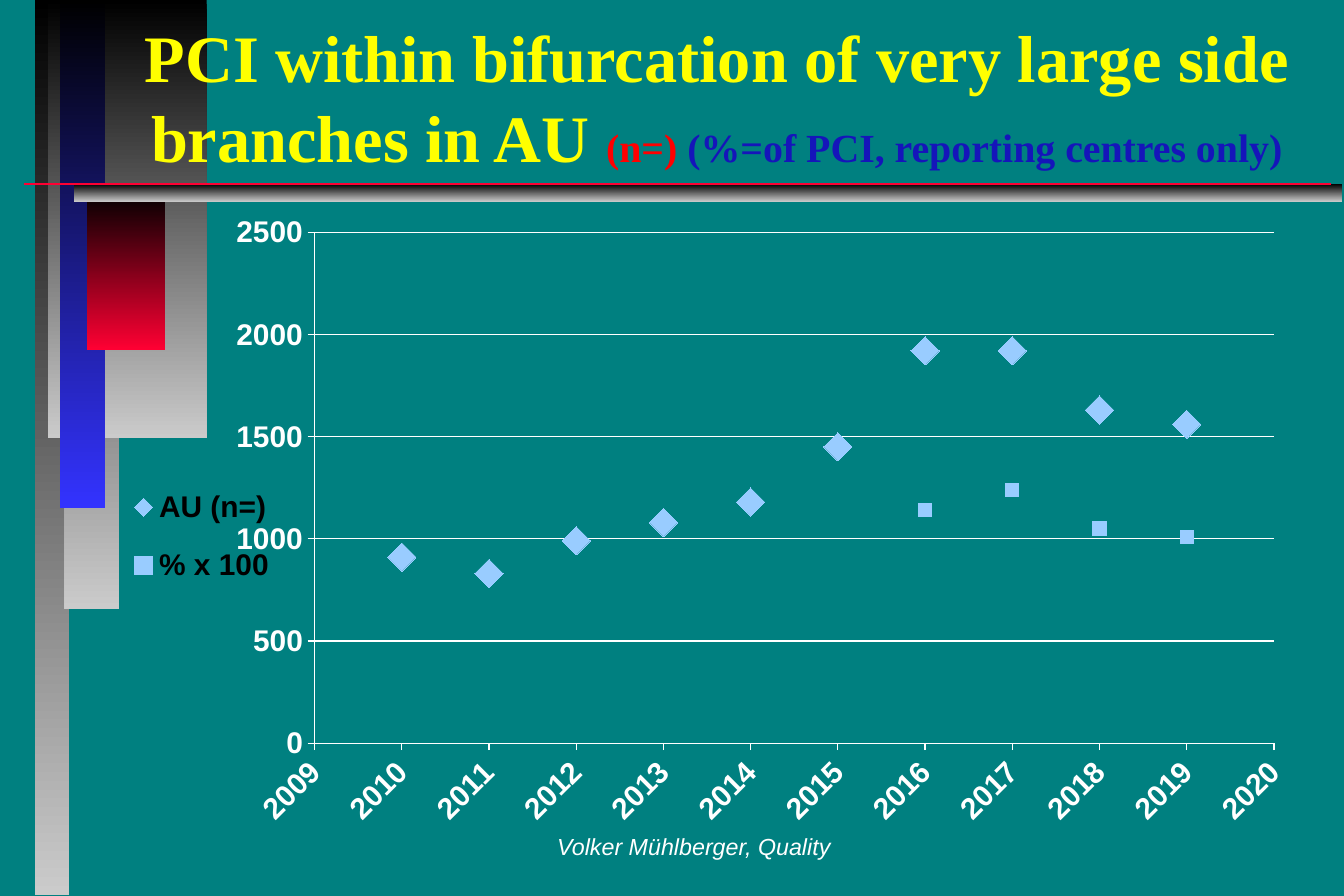
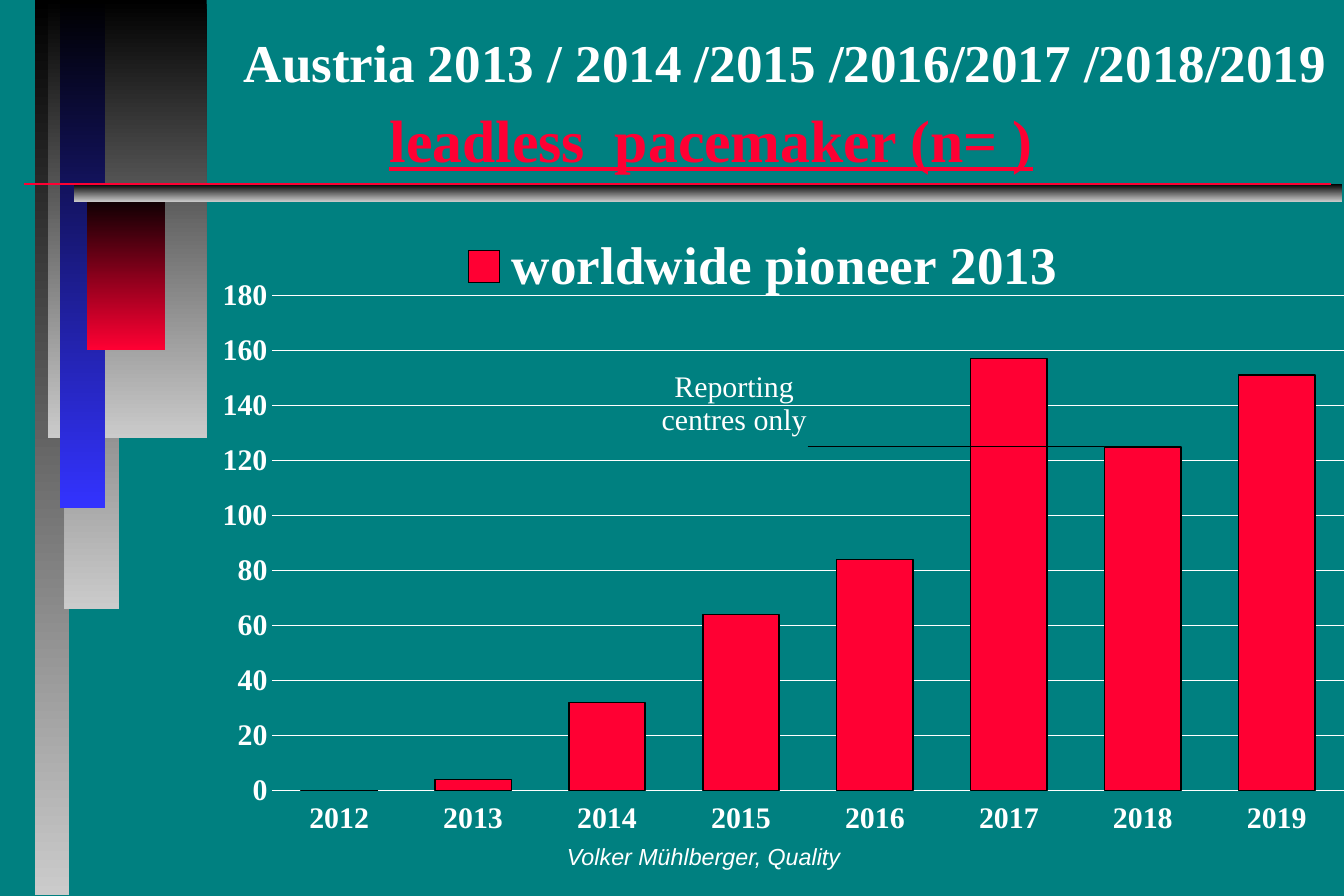
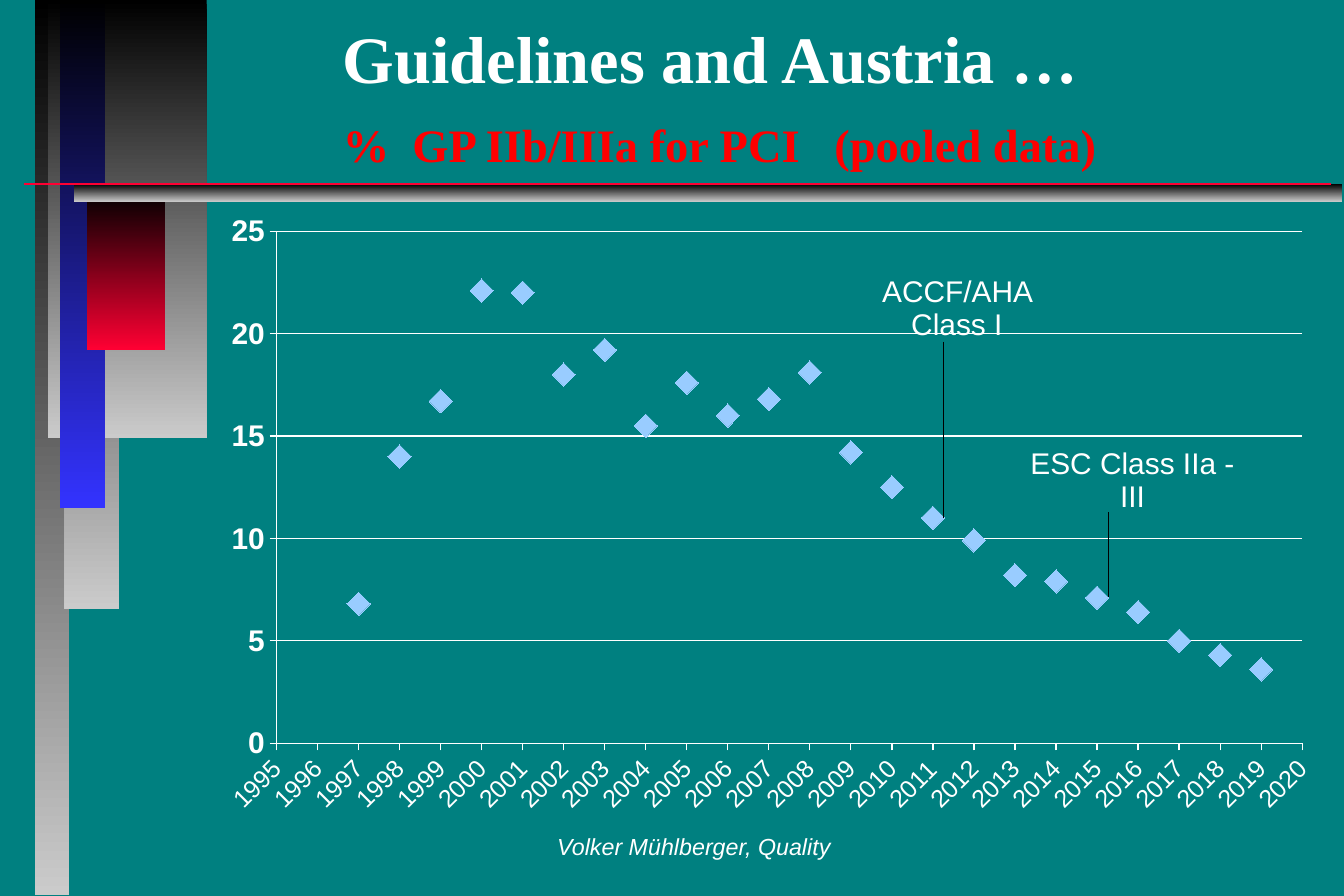
from dataclasses import dataclass

from pptx import Presentation
from pptx.chart.data import CategoryChartData, XyChartData
from pptx.dml.color import RGBColor
from pptx.enum.chart import (XL_CHART_TYPE, XL_LEGEND_POSITION, XL_MARKER_STYLE,
                             XL_TICK_LABEL_POSITION, XL_TICK_MARK)
from pptx.enum.shapes import MSO_CONNECTOR, MSO_SHAPE
from pptx.enum.text import MSO_ANCHOR, MSO_AUTO_SIZE, PP_ALIGN
from pptx.oxml import parse_xml
from pptx.oxml.ns import nsdecls
from pptx.util import Inches, Pt


@dataclass(frozen=True)
class Theme:
    teal: str = "008080"
    white: str = "FFFFFF"
    black: str = "000000"
    grey: str = "CBCBCB"
    blue: str = "3333FF"
    navy: str = "1515BA"
    crimson: str = "FF0033"
    red: str = "FF0000"
    yellow: str = "FFFF00"
    sky: str = "99CCFF"
    serif: str = "Times New Roman"
    sans: str = "Arial"
    title_size: int = 40
    legend_size: int = 32
    chart_size: int = 18
    small_axis_size: int = 15
    footer_size: int = 14
    callout_spacing: int = 20


THEME = Theme()

# Gradient bands behind every slide: left, top, width, height, end colour
BANDS = [
    (0.29, 0, 0.29, 7.49, THEME.grey),
    (0.54, 0, 0.46, 5.1, THEME.grey),
    (0.4, 0, 1.33, 3.67, THEME.grey),
    (0.5, 0, 0.38, 4.25, THEME.blue),
    (0.73, 1.6, 0.65, 1.33, THEME.crimson),
    (0.62, 1.54, 10.61, 0.15, THEME.grey),
]


def rgb(color):
    return RGBColor.from_string(color)


def set_font(font, size, color, name=THEME.sans, bold=False):
    font.size, font.name, font.bold = Pt(size), name, bold
    font.color.rgb = rgb(color)


def set_line(line, color, width):
    line.color.rgb = rgb(color)
    line.width = Pt(width)


# Shared decoration

def add_band(slide, left, top, width, height, color):
    band = slide.shapes.add_shape(MSO_SHAPE.RECTANGLE, Inches(left), Inches(top),
                                  Inches(width), Inches(height))
    band.shadow.inherit = False
    band.line.fill.background()
    band.fill.gradient()
    band.fill.gradient_angle = 270
    for stop, stop_color in zip(band.fill.gradient_stops, (THEME.black, color)):
        stop.color.rgb = rgb(stop_color)
    return band


def add_rule(slide, start, end, color, width):
    rule = slide.shapes.add_connector(MSO_CONNECTOR.STRAIGHT,
                                      *(Inches(value) for value in start + end))
    set_line(rule.line, color, width)
    rule.element.spPr.append(parse_xml(f"<a:effectLst {nsdecls('a')}/>"))
    return rule


def decorate_layout(layout, slide):
    """Draw the bands once and move them behind the layout's placeholders."""
    parts = [add_band(slide, *band) for band in BANDS]
    parts.append(add_rule(slide, (0.2, 1.54), (11.14, 1.54), THEME.crimson, 1))
    for index, part in enumerate(parts):
        part.element.xpath(".//p:cNvPr")[0].set("id", str(100 + index))
        layout.shapes.element.insert(2 + index, part.element)


# Text

def add_title(slide, left, width, lines, alignment=PP_ALIGN.LEFT, bottom=0.05):
    """Each line is (indent, space before, [(text, size, color, underline)])."""
    title = slide.shapes.title
    title.left, title.top = Inches(left), Inches(0.25)
    title.width, title.height = Inches(width), Inches(1.27)
    frame = title.text_frame
    frame.auto_size = MSO_AUTO_SIZE.NONE
    frame.vertical_anchor = MSO_ANCHOR.BOTTOM
    frame.margin_bottom = Inches(bottom)
    for index, (indent, space, runs) in enumerate(lines):
        paragraph = frame.add_paragraph() if index else frame.paragraphs[0]
        paragraph.alignment = alignment
        paragraph.space_before = Pt(space)
        properties = paragraph._p.get_or_add_pPr()
        properties.set("marL", str(Inches(indent)))
        properties.set("indent", "0")
        for text, size, color, underline in runs:
            run = paragraph.add_run()
            run.text = text
            set_font(run.font, size, color, THEME.serif, bold=True)
            run.font.underline = underline


def add_text(slide, text, left, top, width, height, size, name=THEME.sans, wrap=True):
    box = slide.shapes.add_textbox(Inches(left), Inches(top), Inches(width), Inches(height))
    frame = box.text_frame
    frame.word_wrap = wrap
    frame.vertical_anchor = MSO_ANCHOR.MIDDLE
    frame.margin_left = frame.margin_right = frame.margin_top = frame.margin_bottom = 0
    paragraph = frame.paragraphs[0]
    paragraph.text = text
    paragraph.alignment = PP_ALIGN.CENTER
    set_font(paragraph.font, size, THEME.white, name)
    return paragraph


def add_footer(slide, width=3.56, height=0.5):
    paragraph = add_text(slide, "Volker Mühlberger, Quality", 4.03, 6.83, width, height,
                         THEME.footer_size, wrap=False)
    paragraph.font.italic = True


def add_callout(slide, text, box, start, end, name=THEME.sans):
    add_rule(slide, start, end, THEME.black, 0.75)
    paragraph = add_text(slide, text, *box, THEME.chart_size, name)
    paragraph.line_spacing = Pt(THEME.callout_spacing)


# Charts

def place_part(part, index, left, top, width, height, inner=False):
    """Give a plot area or legend a fixed place, as fractions of the chart."""
    for layout in part.xpath("c:layout"):
        part.remove(layout)
    target = '<c:layoutTarget val="inner"/>' if inner else ""
    part.insert(index, parse_xml(
        f"<c:layout {nsdecls('c')}><c:manualLayout>{target}"
        '<c:xMode val="edge"/><c:yMode val="edge"/>'
        f'<c:x val="{left}"/><c:y val="{top}"/><c:w val="{width}"/><c:h val="{height}"/>'
        "</c:manualLayout></c:layout>"))


def add_chart(slide, kind, data, box, plot, name):
    frame = slide.shapes.add_chart(kind, *(Inches(value) for value in box), data)
    chart = frame.chart
    chart.has_title = False
    chart.has_legend = False
    set_font(chart.font, THEME.chart_size, THEME.white, name)
    chart.plots[0].vary_by_categories = False
    place_part(chart.element.xpath("c:chart/c:plotArea")[0], 0, *plot, inner=True)
    return chart


def add_legend(chart, position, place, size, color, name):
    chart.has_legend = True
    chart.legend.position = position
    chart.legend.include_in_layout = False
    set_font(chart.legend.font, size, color, name, bold=True)
    place_part(chart.element.xpath("c:chart/c:legend")[0], 1, *place)


def format_axis(axis, tick, size, name, bold, width, scale=None, grid=False):
    axis.major_tick_mark, axis.minor_tick_mark = tick, XL_TICK_MARK.NONE
    axis.has_major_gridlines = grid
    if grid:
        set_line(axis.major_gridlines.format.line, THEME.white, width)
    set_line(axis.format.line, THEME.white, width)
    set_font(axis.tick_labels.font, size, THEME.white, name, bold)
    if scale:
        axis.minimum_scale, axis.maximum_scale, axis.major_unit = scale


def add_scatter(slide, series_points, box, plot, years, values, markers, year_size, year_bold):
    data = XyChartData()
    for name, points in series_points.items():
        series = data.add_series(name)
        for year, value in points:
            series.add_data_point(year, value)
    chart = add_chart(slide, XL_CHART_TYPE.XY_SCATTER, data, box, plot, THEME.sans)
    # Years without a value stay empty
    for point in chart.element.xpath(".//c:yVal//c:pt[c:v='None' or c:v='']"):
        point.getparent().remove(point)
    for series, (style, size) in zip(chart.plots[0].series, markers):
        series.format.line.fill.background()
        series.smooth = False
        series.marker.style, series.marker.size = style, size
        series.marker.format.fill.solid()
        series.marker.format.fill.fore_color.rgb = rgb(THEME.sky)
        series.marker.format.line.fill.background()
    format_axis(chart.category_axis, XL_TICK_MARK.OUTSIDE, year_size, THEME.sans,
                year_bold, 0.75, (*years, 1))
    format_axis(chart.value_axis, XL_TICK_MARK.OUTSIDE, THEME.chart_size, THEME.sans,
                True, 0.75, values, grid=True)
    year_labels = chart.element.xpath("c:chart/c:plotArea/c:valAx[1]/c:txPr/a:bodyPr")[0]
    year_labels.set("rot", str(-45 * 60000))
    year_labels.set("vert", "horz")
    return chart


# Slides

def build_bifurcation(slide):
    add_footer(slide)
    add_title(slide, 0.94, 10.12, [(0, 0, [
        ("PCI within bifurcation of very large side branches in AU ",
         THEME.title_size, THEME.yellow, False),
        ("(n=) ", 24, THEME.red, False),
        ("(%=of PCI, reporting centres only)", 24, THEME.navy, False)])],
        PP_ALIGN.CENTER)
    counts = [910, 830, 990, 1080, 1180, 1450, 1920, 1920, 1630, 1560]
    shares = [None] * 6 + [1140, 1240, 1050, 1010]
    chart = add_scatter(
        slide, {"AU (n=)": enumerate(counts, 2010), "% x 100": enumerate(shares, 2010)},
        (0.98, 1.47, 10.27, 5.59), (0.161, 0.085, 0.782, 0.765),
        (2009, 2020), (0, 2500, 500),
        [(XL_MARKER_STYLE.DIAMOND, 17), (XL_MARKER_STYLE.SQUARE, 8)],
        THEME.chart_size, True)
    add_legend(chart, XL_LEGEND_POSITION.LEFT, (0.004, 0.435, 0.13, 0.21),
               THEME.chart_size, THEME.black, THEME.sans)


def build_pacemaker(slide):
    add_footer(slide, 3.72, 0.67)
    add_title(slide, 0.94, 10.31, [
        (1, 0, [("Austria 2013 / 2014 /2015 /2016/2017 /2018/2019", 32, THEME.white, False)]),
        (2.22, 6, [("leadless  pacemaker (n= )", 36, THEME.crimson, True)])],
        bottom=0.06)
    data = CategoryChartData()
    data.categories = [str(year) for year in range(2012, 2020)]
    data.add_series("worldwide pioneer 2013", [0, 4, 32, 64, 84, 157, 125, 151])
    chart = add_chart(slide, XL_CHART_TYPE.COLUMN_CLUSTERED, data, (1.53, 1.84, 9.72, 5.32),
                      (0.077, 0.119, 0.923, 0.779), THEME.serif)
    chart.plots[0].gap_width = 75
    columns = chart.plots[0].series[0]
    columns.format.fill.solid()
    columns.format.fill.fore_color.rgb = rgb(THEME.crimson)
    set_line(columns.format.line, THEME.black, 1)
    for axis, scale in ((chart.category_axis, None), (chart.value_axis, (0, 180, 20))):
        format_axis(axis, XL_TICK_MARK.NONE, THEME.chart_size, THEME.serif, True, 0.25,
                    scale, grid=scale is not None)
    chart.category_axis.tick_label_position = XL_TICK_LABEL_POSITION.LOW
    chart.value_axis.format.line.fill.background()
    add_legend(chart, XL_LEGEND_POSITION.TOP, (0.24, 0.028, 0.52, 0.09),
               THEME.legend_size, THEME.white, THEME.serif)
    add_callout(slide, "Reporting centres only", (5.47, 3.08, 1.35, 0.6),
                (6.76, 3.74), (9.24, 3.74), THEME.serif)


def build_guidelines(slide):
    add_footer(slide)
    add_title(slide, 1.77, 9.37, [
        (1, 0, [("Guidelines and Austria …", THEME.title_size, THEME.white, False)]),
        (1, 12, [("%  GP IIb/IIIa for PCI   (pooled data)", 28, THEME.red, False)])],
        bottom=0.08)
    percentages = [None, 6.8, 14, 16.7, 22.1, 22, 18, 19.2, 15.5, 17.6, 16, 16.8, 18.1,
                   14.2, 12.5, 11, 9.9, 8.2, 7.9, 7.1, 6.4, 5, 4.3, 3.6]
    add_scatter(slide, {"AU": enumerate(percentages, 1996)},
                (0.98, 1.55, 10.27, 5.51), (0.13, 0.07, 0.836, 0.778),
                (1995, 2020), (0, 25, 5), [(XL_MARKER_STYLE.DIAMOND, 14)],
                THEME.small_axis_size, False)
    add_callout(slide, "ACCF/AHA Class I", (7.31, 2.3, 1.4, 0.56), (7.9, 2.86), (7.9, 4.34))
    add_callout(slide, "ESC Class IIa - III", (8.58, 3.74, 1.8, 0.56), (9.28, 4.29), (9.28, 5))


def main():
    presentation = Presentation()
    presentation.slide_width, presentation.slide_height = Inches(11.25), Inches(7.5)
    background = presentation.slide_master.background.fill
    background.solid()
    background.fore_color.rgb = rgb(THEME.teal)
    layout = presentation.slide_layouts.get_by_name("Title Only")
    for index, build in enumerate((build_bifurcation, build_pacemaker, build_guidelines)):
        slide = presentation.slides.add_slide(layout)
        if index == 0:
            decorate_layout(layout, slide)
        build(slide)
    presentation.save("out.pptx")


if __name__ == "__main__":
    main()
